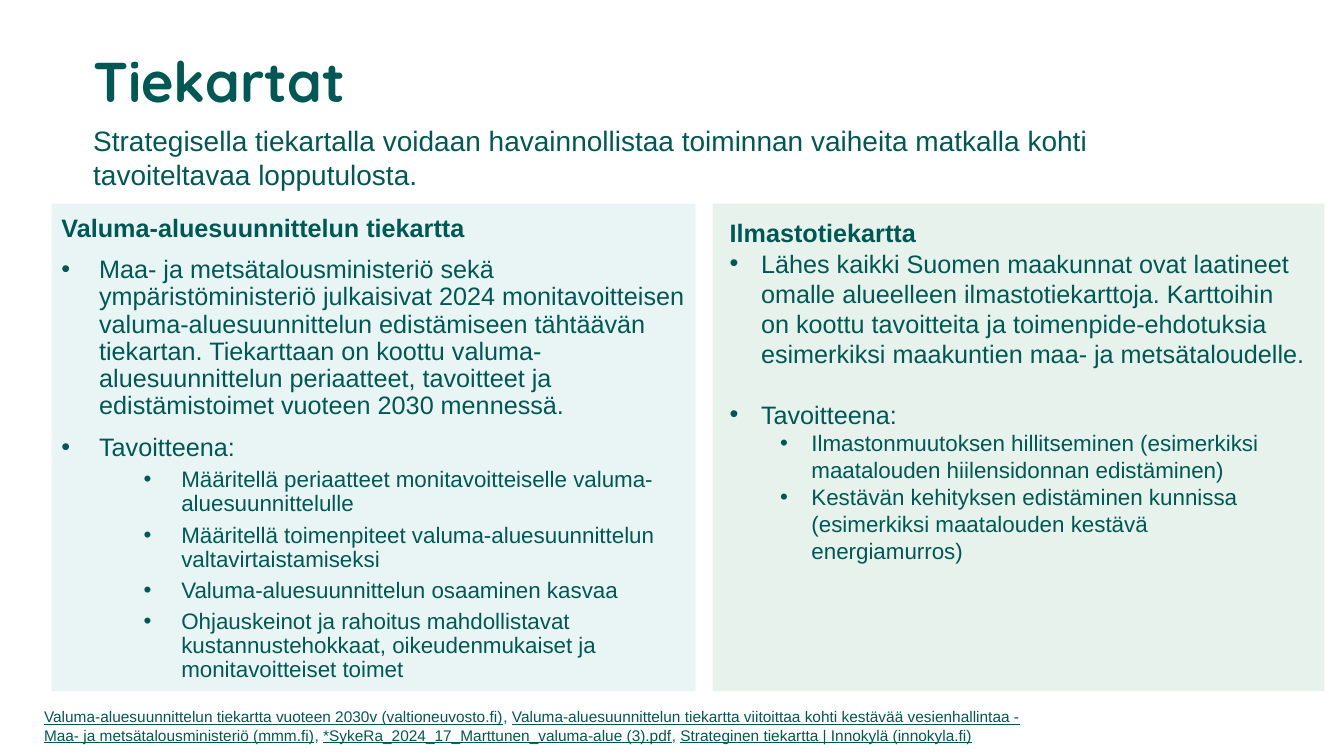
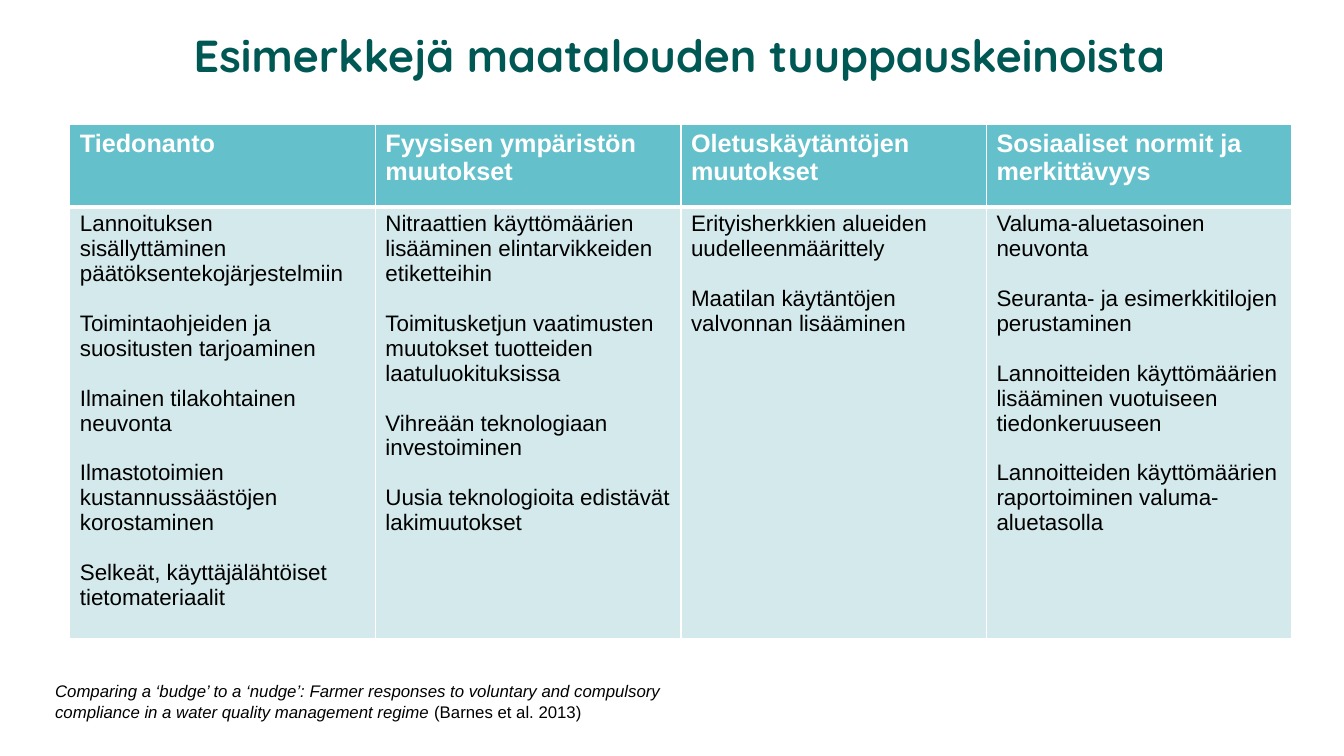
from lxml.etree import SubElement
from pptx import Presentation
from pptx.dml.color import RGBColor
from pptx.enum.shapes import MSO_SHAPE
from pptx.enum.text import MSO_ANCHOR, PP_ALIGN
from pptx.oxml import parse_xml
from pptx.oxml.ns import nsdecls, qn
from pptx.util import Cm, Pt

HUES = {
    "deep": "005854",
    "blue": "006085",
    "mint": "C7E3D2",
    "aqua": "CFE9EA",
    "head": "64C1CB",
    "cell": "D3E9EC",
    "white": "FFFFFF",
    "black": "000000",
}
BASE = {"name": "Arial", "size": Pt(18), "bold": False, "hue": "deep"}
TITLE = {"name": "Quicksand", "size": Pt(40), "bold": True}
BOLD = {"bold": True}
SUB = {"size": Pt(16)}


def write(frame, items):
    frame.word_wrap = True
    for i, (runs, font, form, dent) in enumerate(items):
        para = frame.paragraphs[0] if i == 0 else frame.add_paragraph()
        if dent:
            left, hang = dent
            props = para._p.get_or_add_pPr()
            props.set("marL", str(Cm(left)))
            props.set("indent", str(-Cm(hang)))
            SubElement(props, qn("a:buFont")).set("typeface", "Arial")
            SubElement(props, qn("a:buChar")).set("char", "•")
        for key, value in form.items():
            setattr(para, key, value)
        for text, extra in [(runs, {})] if isinstance(runs, str) else runs:
            run = para.add_run()
            run.text = text
            look = {**BASE, **font, **extra}
            run.font.color.rgb = RGBColor.from_string(HUES[look.pop("hue")])
            for key, value in look.items():
                setattr(run.font, key, value)


def box(slide, spot, items, anchor=MSO_ANCHOR.TOP):
    frame = slide.shapes.add_textbox(*map(Cm, spot)).text_frame
    frame.vertical_anchor = anchor
    write(frame, items)


deck = Presentation()
deck.slide_width, deck.slide_height = Cm(33.87), Cm(19.05)
maps, nudge = [deck.slides.add_slide(deck.slide_layouts[6]) for _ in range(2)]

TITLES = [
    (maps, 0.76, "Tiekartat", 40, PP_ALIGN.LEFT),
    (nudge, 0.1, "Esimerkkejä maatalouden tuuppauskeinoista", 32, PP_ALIGN.CENTER),
]
PANELS = [(17.96, 15.42, "mint", 43), (1.3, 16.23, "aqua", 44)]

for left, width, hue, alpha in PANELS:
    panel = maps.shapes.add_shape(MSO_SHAPE.RECTANGLE, Cm(left), Cm(5.13), Cm(width), Cm(12.29))
    panel.shadow.inherit = False
    panel.line.fill.background()
    panel.fill.solid()
    panel.fill.fore_color.rgb = RGBColor.from_string(HUES[hue])
    tint = panel._element.spPr.find(".//" + qn("a:srgbClr"))
    SubElement(tint, qn("a:alpha")).set("val", str(alpha * 1000))

for slide, top, text, size, align in TITLES:
    form = {"line_spacing": 0.9, "alignment": align}
    box(slide, (2.1, top, 30.07, 2.74), [(text, {**TITLE, "size": Pt(size)}, form, None)], MSO_ANCHOR.MIDDLE)

lead = "Strategisella tiekartalla voidaan havainnollistaa toiminnan vaiheita matkalla kohti tavoiteltavaa lopputulosta."
box(maps, (2.1, 3, 26.57, 1.96), [(lead, {"size": Pt(20)}, {}, None)])

tight = {"line_spacing": 0.9}
wide = {**tight, "space_before": Pt(10)}
close = {**tight, "space_before": Pt(5)}
water = [
    ("Valuma-aluesuunnittelun tiekartta", BOLD, tight, None),
    ("Maa- ja metsätalousministeriö sekä ympäristöministeriö julkaisivat 2024 monitavoitteisen valuma-aluesuunnittelun edistämiseen tähtäävän tiekartan. Tiekarttaan on koottu valuma-aluesuunnittelun periaatteet, tavoitteet ja edistämistoimet vuoteen 2030 mennessä.", {}, wide, (0.95, 0.95)),
    ("Tavoitteena:", {}, wide, (0.95, 0.95)),
]
for goal in [
    "Määritellä periaatteet monitavoitteiselle valuma-aluesuunnittelulle",
    "Määritellä toimenpiteet valuma-aluesuunnittelun valtavirtaistamiseksi",
    "Valuma-aluesuunnittelun osaaminen kasvaa",
    "Ohjauskeinot ja rahoitus mahdollistavat kustannustehokkaat, oikeudenmukaiset ja monitavoitteiset toimet",
]:
    water.append((goal, SUB, close, (3.02, 0.95)))
box(maps, (1.3, 5.31, 16.23, 12.11), water)

climate = [
    ("Ilmastotiekartta", BOLD, {}, None),
    ("Lähes kaikki Suomen maakunnat ovat laatineet omalle alueelleen ilmastotiekarttoja. Karttoihin on koottu tavoitteita ja toimenpide-ehdotuksia esimerkiksi maakuntien maa- ja metsätaloudelle.", {}, {}, (0.79, 0.79)),
    ("Tavoitteena:", {}, {"space_before": Pt(21.6)}, (0.79, 0.79)),
]
for goal in [
    "Ilmastonmuutoksen hillitseminen (esimerkiksi maatalouden hiilensidonnan edistäminen)",
    "Kestävän kehityksen edistäminen kunnissa (esimerkiksi maatalouden kestävä energiamurros)",
]:
    climate.append((goal, SUB, {}, (2.06, 0.79)))
box(maps, (18.14, 5.36, 15.01, 9.32), climate)

refs = []
for name in [
    "Valuma-aluesuunnittelun tiekartta vuoteen 2030v (valtioneuvosto.fi)",
    "Valuma-aluesuunnittelun tiekartta viitoittaa kohti kestävää vesienhallintaa - Maa- ja metsätalousministeriö (mmm.fi)",
    "*SykeRa_2024_17_Marttunen_valuma-alue (3).pdf",
    "Strateginen tiekartta | Innokylä (innokyla.fi)",
]:
    if refs:
        refs.append((", ", {"hue": "blue"}))
    refs.append((name, {"underline": True}))
box(maps, (0.86, 17.7, 25.86, 1.2), [(refs, {"size": Pt(11)}, {}, None)])

MEANS = {
    "Tiedonanto": [
        "Lannoituksen sisällyttäminen päätöksentekojärjestelmiin",
        "Toimintaohjeiden ja suositusten tarjoaminen",
        "Ilmainen tilakohtainen neuvonta",
        "Ilmastotoimien kustannussäästöjen korostaminen",
        "Selkeät, käyttäjälähtöiset tietomateriaalit",
    ],
    "Fyysisen ympäristön muutokset": [
        "Nitraattien käyttömäärien lisääminen elintarvikkeiden etiketteihin",
        "Toimitusketjun vaatimusten muutokset tuotteiden laatuluokituksissa",
        "Vihreään teknologiaan investoiminen",
        "Uusia teknologioita edistävät lakimuutokset",
    ],
    "Oletuskäytäntöjen muutokset": [
        "Erityisherkkien alueiden uudelleenmäärittely",
        "Maatilan käytäntöjen valvonnan lisääminen",
    ],
    "Sosiaaliset normit ja merkittävyys": [
        "Valuma-aluetasoinen neuvonta",
        "Seuranta- ja esimerkkitilojen perustaminen",
        "Lannoitteiden käyttömäärien lisääminen vuotuiseen tiedonkeruuseen",
        "Lannoitteiden käyttömäärien raportoiminen valuma-aluetasolla",
    ],
}
grid = nudge.shapes.add_table(2, len(MEANS), Cm(1.76), Cm(3.13), Cm(30.8), Cm(12.32)).table
grid.horz_banding = False
grid.rows[0].height, grid.rows[1].height = Cm(2.08), Cm(10.24)
for col, (head, means) in enumerate(MEANS.items()):
    grid.columns[col].width = Cm(7.7)
    body = []
    for mean in means:
        form = {"space_before": Pt(17.8)} if body else {}
        body.append((mean, {**SUB, "hue": "black"}, form, None))
    top = [(head, {**BOLD, "hue": "white"}, {}, None)]
    for row, (items, hue, thick) in enumerate([(top, "head", "B"), (body, "cell", "T")]):
        cell = grid.cell(row, col)
        write(cell.text_frame, items)
        cell.fill.solid()
        cell.fill.fore_color.rgb = RGBColor.from_string(HUES[hue])
        for i, side in enumerate("LRTB"):
            width = Pt(3 if side == thick else 1)
            edge = parse_xml(
                f'<a:ln{side} {nsdecls("a")} w="{width}"><a:solidFill>'
                f'<a:srgbClr val="{HUES["white"]}"/></a:solidFill></a:ln{side}>'
            )
            cell._tc.get_or_add_tcPr().insert(i, edge)

cite = [
    ("Comparing a ‘budge’ to a ‘nudge’: Farmer responses to voluntary and compulsory compliance in a water quality management regime ", {"italic": True}),
    ("(Barnes et al. 2013)", {}),
]
box(nudge, (1.14, 17.04, 16.03, 1.27), [(cite, {"size": Pt(12), "hue": "black"}, {}, None)])

deck.save("out.pptx")
